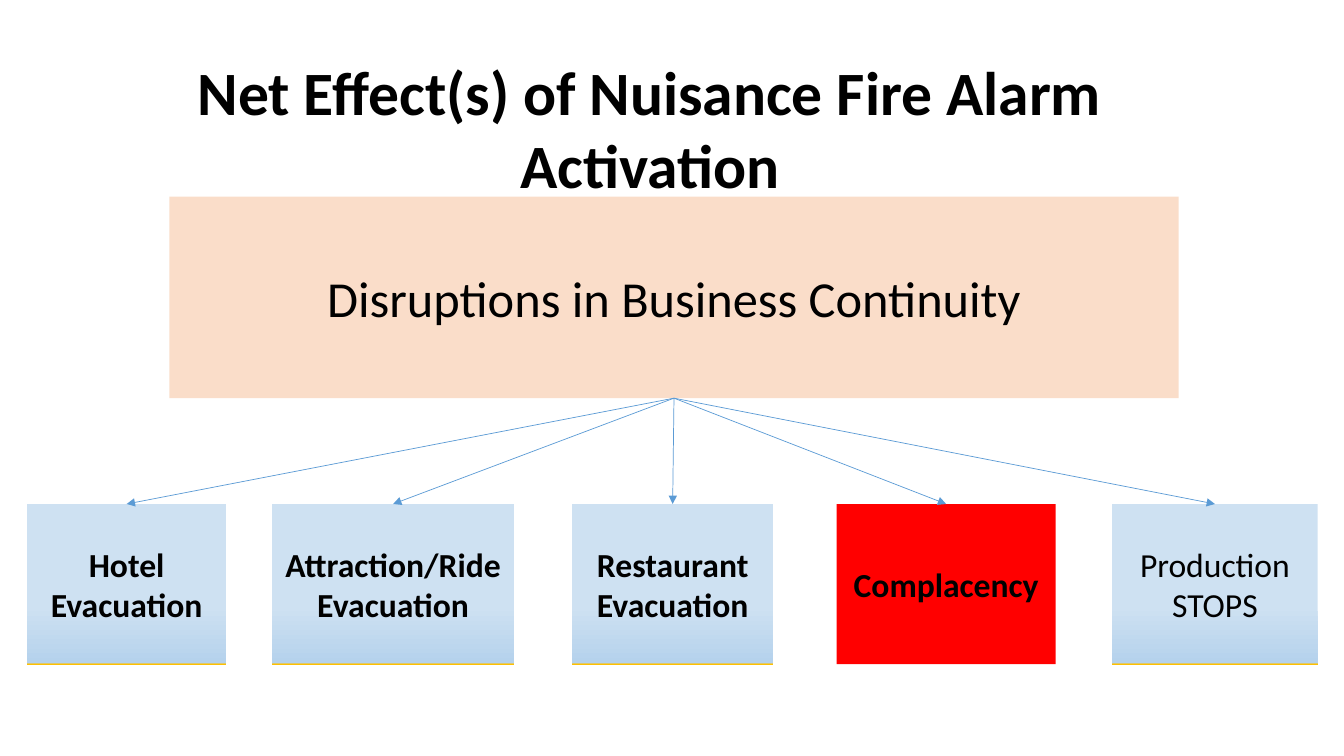
"""Build a slide on the effects of nuisance fire alarm activation."""
from copy import deepcopy

from lxml import etree
from pptx import Presentation
from pptx.dml.color import RGBColor
from pptx.enum.shapes import MSO_CONNECTOR, MSO_SHAPE
from pptx.enum.text import MSO_ANCHOR, MSO_AUTO_SIZE, PP_ALIGN
from pptx.oxml.ns import qn
from pptx.util import Inches, Pt

STRAIGHT = MSO_CONNECTOR.STRAIGHT
RECTANGLE = MSO_SHAPE.RECTANGLE
TOP, MIDDLE = MSO_ANCHOR.TOP, MSO_ANCHOR.MIDDLE
NO_FIT = MSO_AUTO_SIZE.NONE
CENTER = PP_ALIGN.CENTER

FONT = "Calibri"
BLACK = RGBColor(0x00, 0x00, 0x00)
ORANGE = RGBColor(0xED, 0x7D, 0x31)
RED = RGBColor(0xFF, 0x00, 0x00)
BLUE = RGBColor(0x5B, 0x9B, 0xD5)
PALE_BLUE = RGBColor(0xCE, 0xE1, 0xF2)
SOFT_BLUE = RGBColor(0xB5, 0xD2, 0xEC)
GOLD = RGBColor(0xFF, 0xC0, 0x00)
EFFECT_STOPS = [(0.64, PALE_BLUE), (0.99, SOFT_BLUE), (1, GOLD)]

WIDTH, HEIGHT = Inches(13.33), Inches(7.5)
COLUMN, ROW = WIDTH / 100, HEIGHT / 75
EFFECT_ROW, EFFECT_ROWS = 50, 15.9
BOTTOM_SITE, TOP_SITE = 2, 0

EFFECTS = [
    ("Hotel Evacuation", 2, 14.85, True, None),
    ("Attraction/Ride Evacuation", 20.25, 18, True, None),
    ("Restaurant Evacuation", 42.55, 15, True, None),
    ("Complacency", 62.25, 16.3, True, RED),
    ("Production STOPS", 82.75, 15.3, False, None),
]


def grid(column, row, columns, rows):
    """Turn grid cells into left, top, width and height."""
    return (round(column * COLUMN), round(row * ROW),
            round(columns * COLUMN), round(rows * ROW))


def write(shape, text, size, bold, anchor):
    """Write one centred, wrapped run into a shape."""
    frame = shape.text_frame
    frame.word_wrap = True
    frame.auto_size = NO_FIT
    frame.vertical_anchor = anchor
    para = frame.paragraphs[0]
    para.alignment = CENTER
    span = para.add_run()
    span.text = text
    span.font.name = FONT
    span.font.size = Pt(size)
    span.font.bold = bold
    span.font.color.rgb = BLACK


def add_title(page, text):
    """Place and format the title placeholder."""
    title = page.shapes.title
    title.left, title.top, title.width, title.height = grid(5.7, 4.8, 85.35, 8.4)
    write(title, text, 44, True, TOP)


def add_box(page, place, text, size, bold):
    """Add a borderless rectangle with centred text."""
    box = page.shapes.add_shape(RECTANGLE, *place)
    box.shadow.inherit = False
    box.line.fill.background()
    write(box, text, size, bold, MIDDLE)
    return box


def fill_solid(box, color, alpha=100):
    """Fill a box with one colour at a given opacity percentage."""
    box.fill.solid()
    box.fill.fore_color.rgb = color
    if alpha < 100:
        value = box.element.spPr.find(qn("a:solidFill"))[0]
        etree.SubElement(value, qn("a:alpha")).set("val", str(alpha * 1000))


def fill_gradient(box, stops):
    """Fill a box with a downward gradient of any number of stops."""
    box.fill.gradient()
    box.fill.gradient_angle = 270
    stop_list = box.element.spPr.find(qn("a:gradFill")).find(qn("a:gsLst"))
    while len(stop_list) < len(stops):
        stop_list.append(deepcopy(stop_list[0]))
    for stop, (position, color) in zip(box.fill.gradient_stops, stops):
        stop.position = position
        stop.color.rgb = color


def add_arrow(page, source, target):
    """Connect the bottom of one box to the top of another."""
    arrow = page.shapes.add_connector(STRAIGHT, 0, 0, 0, 0)
    arrow.begin_connect(source, BOTTOM_SITE)
    arrow.end_connect(target, TOP_SITE)
    arrow.line.color.rgb = BLUE
    arrow.line.width = Pt(0.5)
    properties = arrow.element.spPr
    line = properties.find(qn("a:ln"))
    etree.SubElement(line, qn("a:tailEnd")).set("type", "triangle")
    etree.SubElement(properties, qn("a:effectLst"))


def main():
    """Build and save the slide."""
    deck = Presentation()
    deck.slide_width, deck.slide_height = WIDTH, HEIGHT
    page = deck.slides.add_slide(deck.slide_layouts[5])
    add_title(page, "Net Effect(s) of Nuisance Fire Alarm Activation")
    cause = add_box(page, grid(12.6, 19.5, 75.1, 20),
                    "Disruptions in Business Continuity", 36, False)
    fill_solid(cause, ORANGE, 26)
    for text, column, columns, bold, color in EFFECTS:
        place = grid(column, EFFECT_ROW, columns, EFFECT_ROWS)
        effect = add_box(page, place, text, 24, bold)
        if color is None:
            fill_gradient(effect, EFFECT_STOPS)
        else:
            fill_solid(effect, color)
        add_arrow(page, cause, effect)
    deck.save("out.pptx")


if __name__ == "__main__":
    main()
